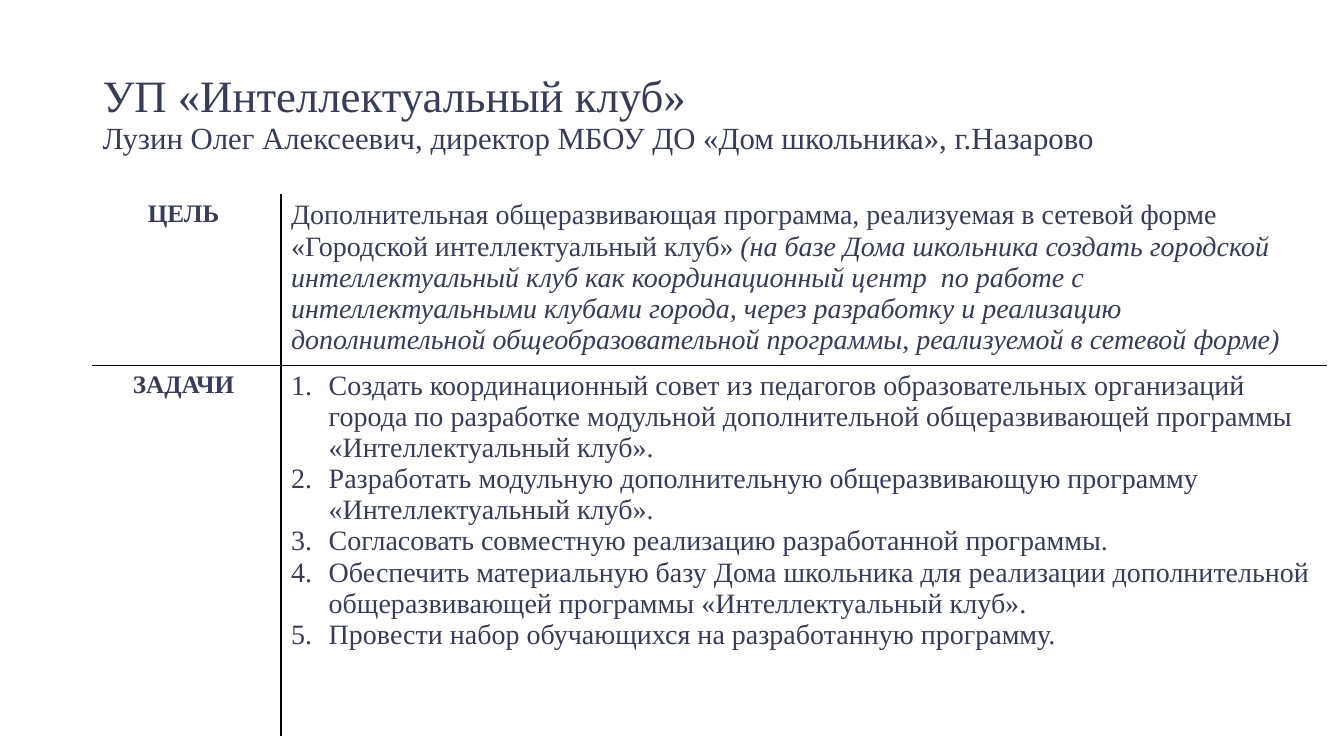
from lxml import etree
from pptx import Presentation
from pptx.dml.color import RGBColor
from pptx.enum.text import MSO_ANCHOR, PP_ALIGN
from pptx.oxml.ns import qn
from pptx.util import Cm, Pt

INK = RGBColor(0x37, 0x3C, 0x59)
BLACK = RGBColor(0, 0, 0)
WHITE = RGBColor(0xFF, 0xFF, 0xFF)
CENTER = PP_ALIGN.CENTER
LEFT = PP_ALIGN.LEFT
MIDDLE = MSO_ANCHOR.MIDDLE
TITLE_ONLY = 5

HEADING = {"size": Pt(32)}
AUTHOR = {"size": Pt(22)}
LABEL = {"size": Pt(18), "bold": True}
BODY = {"size": Pt(20), "bold": False}
REMARK = {**BODY, "italic": True}

GOAL = [
    ("Дополнительная общеразвивающая программа, реализуемая в сетевой форме "
     "«Городской интеллектуальный клуб»", BODY),
    (" ", {"size": Pt(18), "bold": False}),
    ("(на базе Дома школьника создать городской интеллектуальный клуб как "
     "координационный центр  по работе с интеллектуальными клубами города, "
     "через разработку и реализацию дополнительной общеобразовательной "
     "программы, реализуемой в сетевой форме)", REMARK),
]
TASKS = [
    "Создать координационный совет из педагогов образовательных организаций "
    "города по разработке модульной дополнительной общеразвивающей программы "
    "«Интеллектуальный клуб».",
    "Разработать модульную дополнительную общеразвивающую программу "
    "«Интеллектуальный клуб».",
    "Согласовать совместную реализацию разработанной программы.",
    "Обеспечить материальную базу Дома школьника для реализации дополнительной "
    "общеразвивающей программы «Интеллектуальный клуб».",
    "Провести набор обучающихся на разработанную программу.",
]


class SlideBuilder:
    font_name = "Times New Roman"

    def __init__(self, deck):
        self.page = deck.slides.add_slide(deck.slide_layouts[TITLE_ONLY])

    def span(self, para, text, style):
        span = para.add_run()
        span.text = text
        span.font.name = self.font_name
        span.font.color.rgb = INK
        for name, value in style.items():
            setattr(span.font, name, value)

    def paragraphs(self, frame, contents, align=LEFT, numbered=False):
        for index, spans in enumerate(contents):
            para = frame.add_paragraph() if index else frame.paragraphs[0]
            para.alignment = align
            for text, style in spans:
                self.span(para, text, style)
            if numbered:
                self.number(para)

    def number(self, para):
        properties = para._p.get_or_add_pPr()
        indent = Cm(0.95)
        properties.set("marL", str(indent))
        properties.set("indent", str(-indent))
        etree.SubElement(properties, qn("a:buFont"), typeface="+mj-lt")
        etree.SubElement(properties, qn("a:buAutoNum"), type="arabicPeriod")

    def title(self, place, heading, author):
        box = self.page.shapes.title
        for name, value in zip(("left", "top", "width", "height"), place):
            setattr(box, name, value)
        frame = box.text_frame
        frame.word_wrap = True
        frame.vertical_anchor = MIDDLE
        para = frame.paragraphs[0]
        para.alignment = LEFT
        para.line_spacing = 0.9
        self.span(para, heading, HEADING)
        para.add_line_break()
        self.span(para, author, AUTHOR)

    def borders(self, cell, colors):
        properties = cell._tc.get_or_add_tcPr()
        for side, color in zip(("L", "R", "T", "B"), colors):
            line = etree.SubElement(properties, qn(f"a:ln{side}"), w=str(Pt(1)))
            fill = etree.SubElement(line, qn("a:solidFill"))
            etree.SubElement(fill, qn("a:srgbClr"), val=str(color))

    def table(self, place, widths, heights, rows):
        grid = self.page.shapes.add_table(len(rows), len(widths), *place).table
        grid.first_row = grid.horz_banding = False
        for column, width in zip(grid.columns, widths):
            column.width = width
        for row, height in zip(grid.rows, heights):
            row.height = height
        for r, contents in enumerate(rows):
            for c, content in enumerate(contents):
                cell = grid.cell(r, c)
                inner = (c > 0, c < len(widths) - 1, r > 0, r < len(rows) - 1)
                self.borders(cell, [BLACK if side else WHITE for side in inner])
                cell.fill.background()
                self.paragraphs(cell.text_frame, **content)


def main():
    deck = Presentation()
    deck.slide_width, deck.slide_height = Cm(33.87), Cm(19.05)
    builder = SlideBuilder(deck)
    builder.title(
        (Cm(2.33), Cm(1.06), Cm(29.21), Cm(3.68)),
        "УП «Интеллектуальный клуб»",
        "Лузин Олег Алексеевич, директор МБОУ ДО «Дом школьника», г.Назарово",
    )
    widths = (Cm(4.75), Cm(26.34))
    heights = (Cm(4.3), Cm(9.35))
    rows = [
        [{"contents": [[("ЦЕЛЬ ", LABEL)]], "align": CENTER},
         {"contents": [GOAL]}],
        [{"contents": [[("ЗАДАЧИ ", LABEL)]], "align": CENTER},
         {"contents": [[(task, BODY)] for task in TASKS], "numbered": True}],
    ]
    place = (Cm(2.33), Cm(4.91), sum(widths), sum(heights))
    builder.table(place, widths, heights, rows)
    deck.save("out.pptx")


if __name__ == "__main__":
    main()
